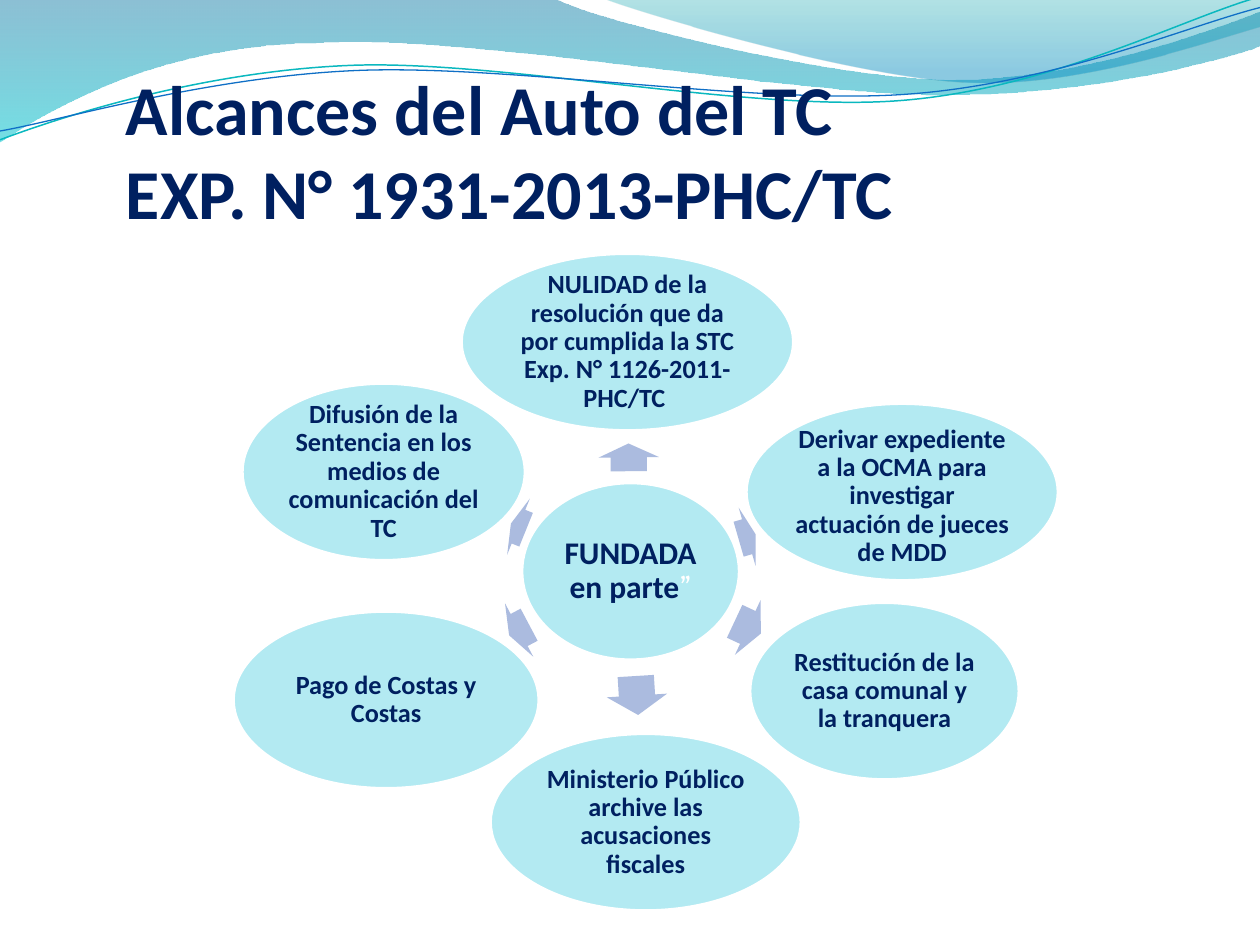
from pptx import Presentation
from pptx.dml.color import RGBColor
from pptx.enum.shapes import MSO_SHAPE
from pptx.enum.text import MSO_ANCHOR, PP_ALIGN
from pptx.oxml.ns import qn
from pptx.util import Inches, Pt
from lxml import etree

OVAL, ARROW = MSO_SHAPE.OVAL, MSO_SHAPE.RIGHT_ARROW
MIDDLE, BOTTOM = MSO_ANCHOR.MIDDLE, MSO_ANCHOR.BOTTOM
LEFT, CENTER = PP_ALIGN.LEFT, PP_ALIGN.CENTER

BANDS = [
    ((0, -0.01), [
        [(4.4, -0.01)],
        [(4.76, 0.17), (6.64, 0.63), (7.58, 0.63)],
        [(8.53, 0.63), (9.58, 0.26), (10, 0.09)],
        [(10.01, 0.36)],
        [(9.83, 0.44), (8.7, 0.76), (7.46, 0.75)],
        [(6.22, 0.75), (3.82, 0.28), (2.57, 0.34)],
        [(1.29, 0.35), (0.46, 0.83), (-0.01, 1.13)],
    ], [(0, "0074A1", 45), (1, "00C6CF", 55)]),
    ((4.79, -0.01), [
        [(5.09, 0.11), (6.82, 0.62), (7.69, 0.65)],
        [(8.56, 0.69), (9.61, 0.32), (10, 0.21)],
        [(10, 0)],
    ], [(0, "00A1A9", 30), (0.8, "008BBF", 45)]),
]
WAVES = [
    ((0, 1.11), [
        [(0.48, 0.93), (1.58, 0.57), (2.77, 0.52)],
        [(3.95, 0.47), (5.93, 0.89), (7.13, 0.8)],
        [(8.33, 0.71), (9.38, 0.15), (9.98, -0.02)],
    ], "0AB8BF", 0.85),
    ((0, 1.04), [
        [(0.47, 0.96), (1.64, 0.61), (2.83, 0.56)],
        [(4.03, 0.51), (5.97, 0.83), (7.17, 0.75)],
        [(8.36, 0.67), (9.41, 0.21), (10, 0.06)],
    ], "0F6FC6", 0.75),
]
ARROWS = [
    (4.88, 3.39, 0.22, 269.3),
    (5.86, 4.02, 0.14, 343.8),
    (5.82, 4.74, 0.23, 25.1),
    (4.9, 5.28, 0.31, 86.5),
    (4.03, 4.76, 0.18, 152.1),
    (4.05, 3.94, 0.13, 202),
]
NODES = [
    (3.66, 2.01, 2.64, 0.02,
     "NULIDAD de la resolución que da por cumplida la STC Exp. N° 1126-2011-PHC/TC "),
    (5.92, 3.2, 2.48, 0.09,
     "Derivar expediente a la OCMA para investigar actuación de jueces de MDD"),
    (5.95, 4.78, 2.14, 0.02, "Restitución de la casa comunal y la tranquera"),
    (3.89, 5.82, 2.47, 0.02, "Ministerio Público archive las acusaciones fiscales"),
    (1.85, 4.85, 2.43, 0.02, "Pago de Costas y Costas"),
    (1.92, 3.04, 2.25, 0.02,
     "Difusión de la Sentencia en los medios de comunicación del TC"),
]


def tint(code):
    return RGBColor.from_string(code)


def bend(shape, parts):
    steps = iter(list(shape._element.spPr.iter(qn("a:lnTo"))))
    for part in parts:
        lines = [next(steps) for _ in part]
        if len(part) == 1:
            continue
        curve = etree.Element(qn("a:cubicBezTo"))
        lines[0].addprevious(curve)
        for line in lines:
            curve.append(line[0])
            line.getparent().remove(line)


def write(para, text, size=15, font="Calibri", color="002060", bold=True):
    run = para.add_run()
    run.text = text
    run.font.size = Pt(size)
    run.font.name = font
    run.font.bold = bold
    run.font.color.rgb = tint(color)


class Deck:
    fill = "B3EAF2"
    edge = "FFFFFF"
    arrow_fill = "ABBBDF"
    tall = 1.41

    def __init__(self, slide):
        self.shapes = slide.shapes

    def outline(self, start, parts, close):
        first, *rest = [(Inches(x), Inches(y))
                        for part in ([start], *parts) for x, y in part]
        pen = self.shapes.build_freeform(*first, scale=1)
        pen.add_line_segments(rest, close=close)
        shape = pen.convert_to_shape()
        shape.shadow.inherit = False
        bend(shape, parts)
        return shape

    def band(self, start, parts, stops):
        shape = self.outline(start, parts, True)
        shape.line.fill.background()
        shape.fill.gradient()
        shape.fill.gradient_angle = 270
        for stop, (place, color, _) in zip(shape.fill.gradient_stops, stops):
            stop.position = place
            stop.color.rgb = tint(color)
        marks = shape._element.spPr.iter(qn("a:srgbClr"))
        for mark, (_, _, alpha) in zip(marks, stops):
            etree.SubElement(mark, qn("a:alpha"), val=str(alpha * 1000))

    def wave(self, start, parts, color, width):
        shape = self.outline(start, parts, False)
        shape.fill.background()
        shape.line.color.rgb = tint(color)
        shape.line.width = Pt(width)

    def frame(self, shape, insets, anchor, align):
        frame = shape.text_frame
        frame.word_wrap = True
        frame.vertical_anchor = anchor
        (frame.margin_left, frame.margin_top,
         frame.margin_right, frame.margin_bottom) = map(Inches, insets)
        para = frame.paragraphs[0]
        para.alignment = align
        return para

    def title(self, lines):
        box = self.shapes.add_textbox(Inches(1), Inches(0.52), Inches(9), Inches(1.33))
        para = self.frame(box, (0, 0.05, 0, 0), BOTTOM, LEFT)
        for row, line in enumerate(lines):
            if row:
                para.add_line_break()
            write(para, line, size=40)

    def solid(self, kind, left, top, width, height, color):
        shape = self.shapes.add_shape(
            kind, Inches(left), Inches(top), Inches(width), Inches(height))
        shape.shadow.inherit = False
        shape.fill.solid()
        shape.fill.fore_color.rgb = tint(color)
        return shape

    def node(self, left, top, width, head=0.02, text="", pad=0.02):
        shape = self.solid(OVAL, left, top, width, self.tall, self.fill)
        shape.line.color.rgb = tint(self.edge)
        shape.line.width = Pt(2)
        para = self.frame(shape, (pad, head, pad, pad), MIDDLE, CENTER)
        para.line_spacing = 0.9
        if text:
            write(para, text)
        return para

    def arrow(self, left, top, width, turn):
        shape = self.solid(ARROW, left, top, width, 0.48, self.arrow_fill)
        shape.line.fill.background()
        shape.adjustments[0] = 0.6
        shape.adjustments[1] = 0.5
        shape.rotation = turn


def main():
    show = Presentation()
    show.slide_width, show.slide_height = Inches(10), Inches(7.5)
    deck = Deck(show.slides.add_slide(show.slide_layouts[6]))
    for band in BANDS:
        deck.band(*band)
    for wave in WAVES:
        deck.wave(*wave)
    deck.title(["Alcances del Auto del TC", "EXP. N° 1931-2013-PHC/TC"])
    hub = deck.node(4.14, 3.83, 1.73, head=0.03, pad=0.03)
    write(hub, "FUNDADA en parte", size=18)
    write(hub, "”", size=18, font="Vollkorn", color="FFFFFF", bold=False)
    for arrow, node in zip(ARROWS, NODES):
        deck.arrow(*arrow)
        deck.node(*node)
    show.save("out.pptx")


if __name__ == "__main__":
    main()
